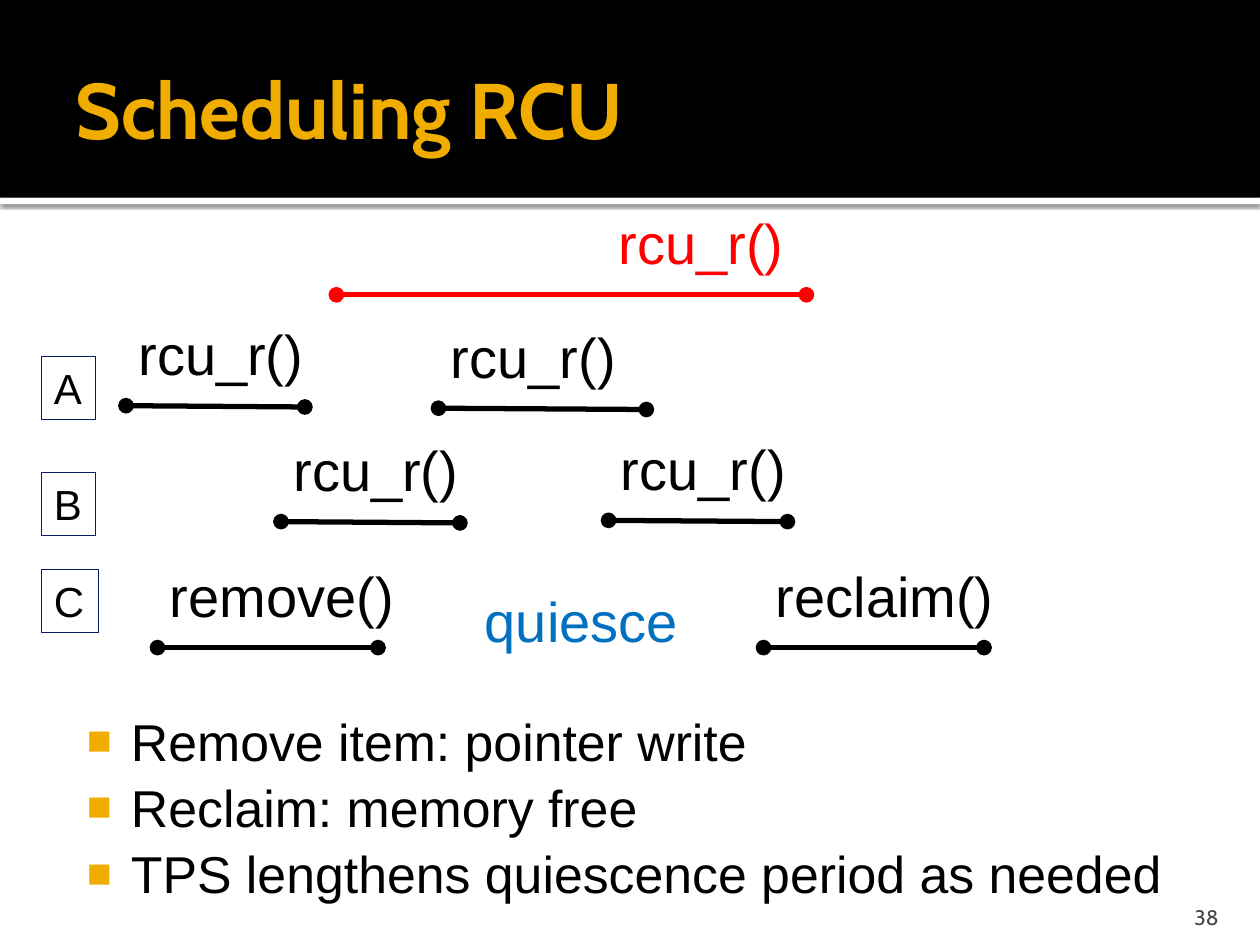
import dataclasses

import lxml.etree
import pptx
import pptx.dml.color
import pptx.enum.shapes
import pptx.enum.text
import pptx.oxml
import pptx.oxml.ns
import pptx.util

ANCHOR = pptx.enum.text.MSO_ANCHOR
ALIGN = pptx.enum.text.PP_ALIGN
NAMESPACE = pptx.oxml.ns.nsdecls("a")


@dataclasses.dataclass(frozen=True)
class Theme:
    heading_font: str = "Cabin"
    body_font: str = "Arial"
    black: str = "000000"
    white: str = "FFFFFF"
    gold: str = "F0AD00"
    red: str = "FF0000"
    blue: str = "0070C0"
    navy: str = "002060"
    gray: str = "454545"
    title_size: float = 45
    label_size: float = 32
    bullet_size: float = 29.6
    thread_size: float = 24
    number_size: float = 12


def color(value):
    return pptx.dml.color.RGBColor.from_string(value)


class SlideBuilder:
    columns = 10
    rows = 7.5

    def __init__(self, deck, theme):
        self.theme = theme
        self.cell_width = deck.slide_width / self.columns
        self.cell_height = deck.slide_height / self.rows
        self.page = deck.slides.add_slide(deck.slide_layouts[6])

    def place(self, column, row):
        return round(column * self.cell_width), round(row * self.cell_height)

    def area(self, column, row, width, height):
        return self.place(column, row) + self.place(width, height)

    def band(self, row, height, fill, shadow=False):
        box = self.rectangle((0, row, self.columns, height))
        box.fill.solid()
        box.fill.fore_color.rgb = color(fill)
        box.line.fill.background()
        if shadow:
            effects = box.element.spPr.find(pptx.oxml.ns.qn("a:effectLst"))
            effects.append(pptx.oxml.parse_xml(
                f'<a:outerShdw {NAMESPACE} blurRad="31750" dist="10160" dir="5400000">'
                f'<a:srgbClr val="{self.theme.black}"><a:alpha val="60000"/></a:srgbClr>'
                "</a:outerShdw>"))

    def rectangle(self, bounds):
        box = self.page.shapes.add_shape(
            pptx.enum.shapes.MSO_SHAPE.RECTANGLE, *self.area(*bounds))
        box.shadow.inherit = False
        return box

    def frame(self, box, insets=(0.1, 0.05, 0.1, 0.05), anchor=ANCHOR.TOP, wrap=True):
        frame = box.text_frame
        frame.word_wrap = wrap
        frame.vertical_anchor = anchor
        left, top, right, bottom = map(pptx.util.Inches, insets)
        frame.margin_left, frame.margin_right = left, right
        frame.margin_top, frame.margin_bottom = top, bottom
        return frame

    def add_span(self, para, text, size, tint, font=None, bold=False, align=ALIGN.LEFT):
        para.alignment = align
        span = para.add_run()
        span.text = text
        span.font.name = font or self.theme.body_font
        span.font.size = pptx.util.Pt(size)
        span.font.bold = bold
        span.font.color.rgb = color(tint)

    def label(self, bounds, text, size, tint, font=None, bold=False,
              align=ALIGN.LEFT, **layout):
        box = self.page.shapes.add_textbox(*self.area(*bounds))
        para = self.frame(box, **layout).paragraphs[0]
        self.add_span(para, text, size, tint, font, bold, align)

    def thread(self, name, row, width=0.43):
        box = self.rectangle((0.33, row, width, 0.5))
        box.fill.background()
        box.line.color.rgb = color(self.theme.navy)
        box.line.width = pptx.util.Pt(0.75)
        para = self.frame(box, wrap=False).paragraphs[0]
        self.add_span(para, name, self.theme.thread_size, self.theme.black)

    def interval(self, name, column, row, length, label_width=1.52,
                 label_shift=0, drop=0.01, tint=None):
        tint = tint or self.theme.black
        line = self.page.shapes.add_connector(
            pptx.enum.shapes.MSO_CONNECTOR.STRAIGHT,
            *self.place(column, row), *self.place(column + length, row + drop))
        line.line.color.rgb = color(tint)
        line.line.width = pptx.util.Pt(3)
        properties = line.element.spPr
        outline = properties.find(pptx.oxml.ns.qn("a:ln"))
        for end in ("headEnd", "tailEnd"):
            lxml.etree.SubElement(outline, pptx.oxml.ns.qn(f"a:{end}"), type="oval")
        lxml.etree.SubElement(properties, pptx.oxml.ns.qn("a:effectLst"))
        self.label((column + label_shift, row - 0.73, label_width, 0.64), name,
                   self.theme.label_size, tint, wrap=False)

    def bullets(self, bounds, items):
        box = self.page.shapes.add_textbox(*self.area(*bounds))
        frame = self.frame(box, insets=(0.06, 0.13, 0.1, 0.05))
        for index, item in enumerate(items):
            para = frame.add_paragraph() if index else frame.paragraphs[0]
            self.add_span(para, item, self.theme.bullet_size, self.theme.black)
            para.space_after = pptx.util.Pt(2.3)
            properties = para._p.get_or_add_pPr()
            properties.set("marL", str(pptx.util.Inches(0.48)))
            properties.set("indent", str(pptx.util.Inches(-0.35)))
            for markup in (
                f'<a:buClr {NAMESPACE}><a:srgbClr val="{self.theme.gold}"/></a:buClr>',
                f'<a:buSzPct {NAMESPACE} val="80000"/>',
                f'<a:buFont {NAMESPACE} typeface="{self.theme.body_font}"/>',
                f'<a:buChar {NAMESPACE} char="■"/>',
            ):
                properties.append(pptx.oxml.parse_xml(markup))


def main():
    deck = pptx.Presentation()
    deck.slide_width = pptx.util.Inches(10)
    deck.slide_height = pptx.util.Inches(7.5)
    theme = Theme()
    slide = SlideBuilder(deck, theme)

    slide.band(1.57, 0.05, theme.white, shadow=True)
    slide.band(0, 1.57, theme.black)
    slide.label((0.5, 0.17, 9, 1.37), "Scheduling RCU", theme.title_size, theme.gold,
                font=theme.heading_font, bold=True, anchor=ANCHOR.MIDDLE,
                insets=(0.1, 0.05, 0.05, 0.05))

    slide.interval("rcu_r()", 2.67, 2.34, 3.73, label_shift=2.14, drop=0, tint=theme.red)
    for column, row, length in ((1, 3.22, 1.42), (3.48, 3.24, 1.65),
                                (2.23, 4.14, 1.42), (4.83, 4.13, 1.42)):
        slide.interval("rcu_r()", column, row, length)
    slide.interval("remove()", 1.25, 5.14, 1.75, label_width=1.99, drop=0)
    slide.interval("reclaim()", 6.06, 5.14, 1.75, label_width=1.94, drop=0)
    slide.label((3.75, 4.61, 1.83, 0.64), "quiesce", theme.label_size, theme.blue)

    slide.thread("A", 2.83)
    slide.thread("B", 3.75)
    slide.thread("C", 4.52, width=0.45)

    slide.bullets((0.5, 5.5, 9, 1.5), (
        "Remove item: pointer write",
        "Reclaim: memory free",
        "TPS lengthens quiescence period as needed",
    ))
    slide.label((8.97, 7.08, 0.8, 0.3), "38", theme.number_size, theme.gray,
                font=theme.heading_font, align=ALIGN.RIGHT, anchor=ANCHOR.BOTTOM,
                insets=(0.1, 0.05, 0.1, 0))
    deck.save("out.pptx")


if __name__ == "__main__":
    main()
